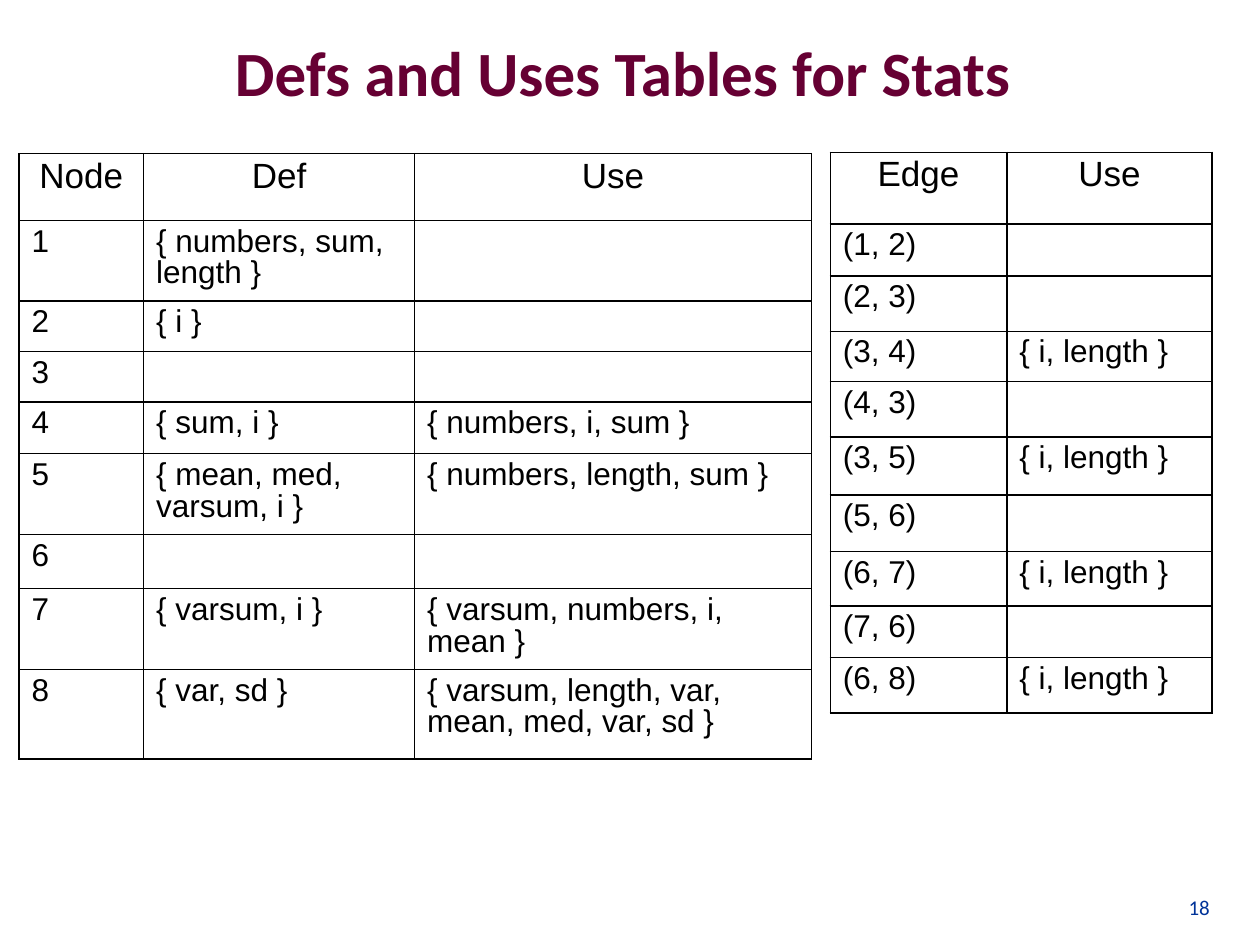
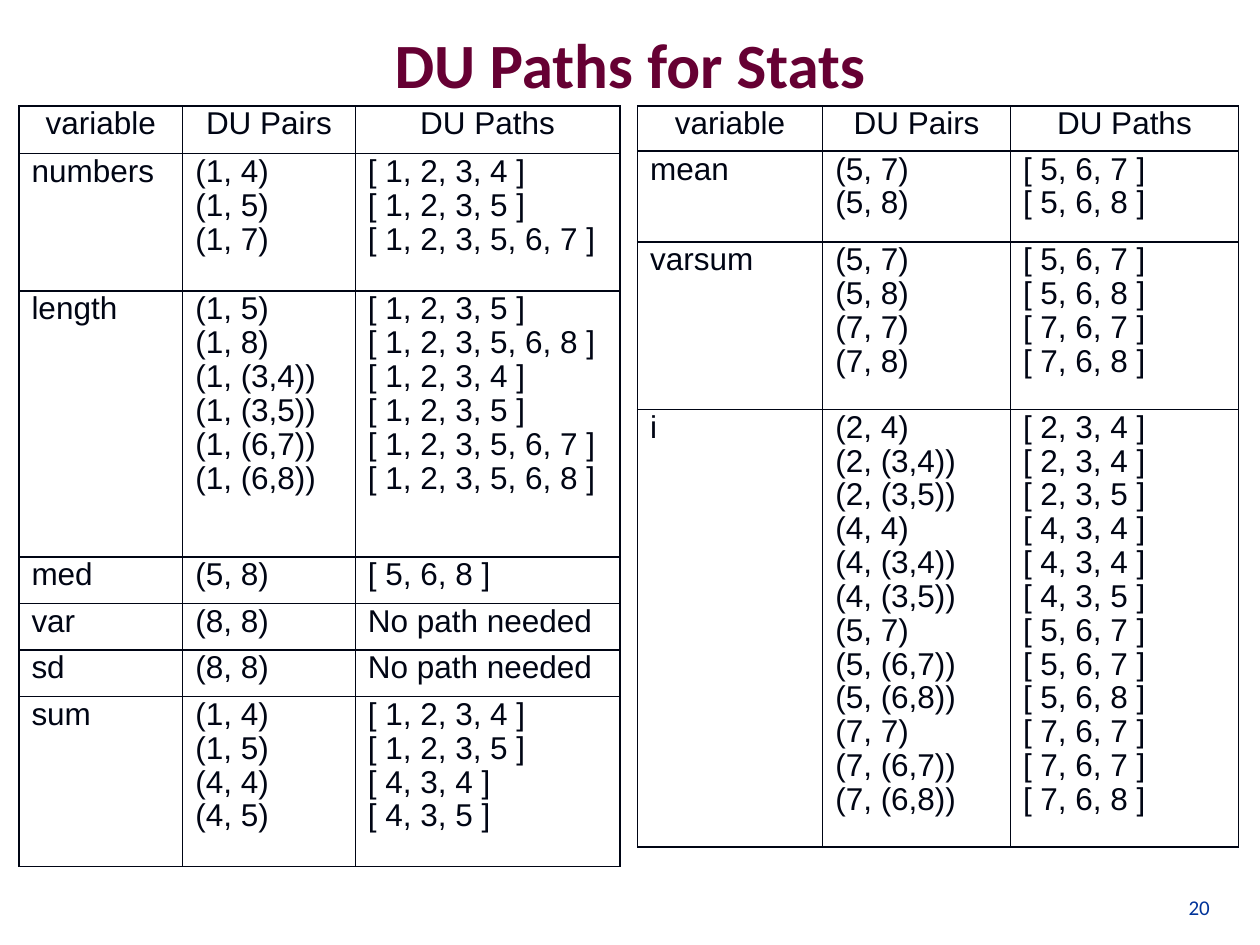
from lxml import etree
from pptx import Presentation
from pptx.dml.color import RGBColor
from pptx.enum.text import MSO_ANCHOR, MSO_AUTO_SIZE, PP_ALIGN
from pptx.oxml.ns import qn
from pptx.util import Inches, Pt

LEFT, CENTER, RIGHT = PP_ALIGN.LEFT, PP_ALIGN.CENTER, PP_ALIGN.RIGHT
MIDDLE, BOTTOM = MSO_ANCHOR.MIDDLE, MSO_ANCHOR.BOTTOM
NO_FIT = MSO_AUTO_SIZE.NONE

MAROON = RGBColor(0x66, 0x00, 0x33)
BLUE = RGBColor(0x00, 0x33, 0x99)
BLACK = RGBColor(0x00, 0x00, 0x00)
INK = RGBColor(0x00, 0x05, 0x14)
WHITE = RGBColor(0xFF, 0xFF, 0xFF)

HEADING_FONT = "Calibri"
TABLE_FONT = "Arial"
TITLE_ONLY = 5
SIDES = ("a:lnL", "a:lnR", "a:lnT", "a:lnB")

NODES = [
    ("Node", "Def", "Use"),
    ("1", "{ numbers, sum, length }", ""),
    ("2", "{ i }", ""),
    ("3", "", ""),
    ("4", "{ sum, i }", "{ numbers, i, sum }"),
    ("5", "{ mean, med, varsum, i }", "{ numbers, length, sum }"),
    ("6", "", ""),
    ("7", "{ varsum, i }", "{ varsum, numbers, i, mean }"),
    ("8", "{ var, sd }", "{ varsum, length, var, mean, med, var, sd }"),
]

PREDICATE_USE = "{ i, length }"
EDGES = [
    ("Edge", "Use"),
    ("(1, 2)", ""),
    ("(2, 3)", ""),
    ("(3, 4)", PREDICATE_USE),
    ("(4, 3)", ""),
    ("(3, 5)", PREDICATE_USE),
    ("(5, 6)", ""),
    ("(6, 7)", PREDICATE_USE),
    ("(7, 6)", ""),
    ("(6, 8)", PREDICATE_USE),
]

PATH_HEADER = ("variable", "DU Pairs", "DU Paths")
NO_PATH = "No path needed"
FIRST_VARIABLES = {
    "numbers": [
        ("(1, 4)", "[ 1, 2, 3, 4 ]"),
        ("(1, 5)", "[ 1, 2, 3, 5 ]"),
        ("(1, 7)", "[ 1, 2, 3, 5, 6, 7 ]"),
    ],
    "length": [
        ("(1, 5)", "[ 1, 2, 3, 5 ]"),
        ("(1, 8)", "[ 1, 2, 3, 5, 6, 8 ]"),
        ("(1, (3,4))", "[ 1, 2, 3, 4 ]"),
        ("(1, (3,5))", "[ 1, 2, 3, 5 ]"),
        ("(1, (6,7))", "[ 1, 2, 3, 5, 6, 7 ]"),
        ("(1, (6,8))", "[ 1, 2, 3, 5, 6, 8 ]"),
    ],
    "med": [("(5, 8)", "[ 5, 6, 8 ]")],
    "var": [("(8, 8)", NO_PATH)],
    "sd": [("(8, 8)", NO_PATH)],
    "sum": [
        ("(1, 4)", "[ 1, 2, 3, 4 ]"),
        ("(1, 5)", "[ 1, 2, 3, 5 ]"),
        ("(4, 4)", "[ 4, 3, 4 ]"),
        ("(4, 5)", "[ 4, 3, 5 ]"),
    ],
}
SECOND_VARIABLES = {
    "mean": [("(5, 7)", "[ 5, 6, 7 ]"), ("(5, 8)", "[ 5, 6, 8 ]")],
    "varsum": [
        ("(5, 7)", "[ 5, 6, 7 ]"),
        ("(5, 8)", "[ 5, 6, 8 ]"),
        ("(7, 7)", "[ 7, 6, 7 ]"),
        ("(7, 8)", "[ 7, 6, 8 ]"),
    ],
    "i": [
        ("(2, 4)", "[ 2, 3, 4 ]"),
        ("(2, (3,4))", "[ 2, 3, 4 ]"),
        ("(2, (3,5))", "[ 2, 3, 5 ]"),
        ("(4, 4)", "[ 4, 3, 4 ]"),
        ("(4, (3,4))", "[ 4, 3, 4 ]"),
        ("(4, (3,5))", "[ 4, 3, 5 ]"),
        ("(5, 7)", "[ 5, 6, 7 ]"),
        ("(5, (6,7))", "[ 5, 6, 7 ]"),
        ("(5, (6,8))", "[ 5, 6, 8 ]"),
        ("(7, 7)", "[ 7, 6, 7 ]"),
        ("(7, (6,7))", "[ 7, 6, 7 ]"),
        ("(7, (6,8))", "[ 7, 6, 8 ]"),
    ],
}


def write(frame, text, font=TABLE_FONT, size=18, color=BLACK, bold=False,
          align=LEFT, line_spacing=1.0, space_before=0):
    for index, line in enumerate(text.split("\n")):
        paragraph = frame.add_paragraph() if index else frame.paragraphs[0]
        paragraph.alignment = align
        paragraph.line_spacing = line_spacing
        paragraph.space_before = Pt(space_before if index else 0)
        run = paragraph.add_run()
        run.text = line
        run.font.name = font
        run.font.size = Pt(size)
        run.font.bold = bold
        run.font.color.rgb = color


def path_rows(variables):
    rows = [PATH_HEADER]
    for variable, entries in variables.items():
        pairs, paths = zip(*entries)
        rows.append((variable, "\n".join(pairs), "\n".join(paths)))
    return rows


def outline(cell, color):
    properties = cell._tc.get_or_add_tcPr()
    for side in SIDES:
        line = etree.SubElement(properties, qn(side), w=str(Pt(1)))
        fill = etree.SubElement(line, qn("a:solidFill"))
        etree.SubElement(fill, qn("a:srgbClr"), val=str(color))


class Deck:
    def __init__(self):
        self.presentation = Presentation()
        self.presentation.slide_width = Inches(10)
        self.presentation.slide_height = Inches(7.5)
        self.slide = None

    def new_slide(self, title, title_box, number):
        layout = self.presentation.slide_layouts[TITLE_ONLY]
        self.slide = self.presentation.slides.add_slide(layout)
        self.title(title, title_box)
        self.page_number(number)

    def title(self, text, box):
        heading = self.slide.shapes.title
        heading.left, heading.top, heading.width, heading.height = map(Inches, box)
        frame = heading.text_frame
        frame.word_wrap = True
        frame.auto_size = NO_FIT
        frame.vertical_anchor = MIDDLE
        write(frame, text, font=HEADING_FONT, size=36, color=MAROON,
              bold=True, align=CENTER)

    def page_number(self, number):
        corner = self.slide.shapes.add_textbox(
            Inches(9.01), Inches(6.83), Inches(0.69), Inches(0.52))
        frame = corner.text_frame
        frame.word_wrap = True
        frame.vertical_anchor = BOTTOM
        write(frame, str(number), font=HEADING_FONT, size=12, color=BLUE, align=RIGHT)

    def table(self, rows, left, top, widths, heights, header_size=18, **style):
        table = self.slide.shapes.add_table(
            len(rows), len(widths), Inches(left), Inches(top),
            Inches(sum(widths)), Inches(sum(heights))).table
        table.first_row = False
        table.horz_banding = False
        for column, width in zip(table.columns, widths):
            column.width = Inches(width)
        for index, (row, height, texts) in enumerate(zip(table.rows, heights, rows)):
            row.height = Inches(height)
            for cell, text in zip(row.cells, texts):
                outline(cell, style["color"])
                cell.fill.solid()
                cell.fill.fore_color.rgb = WHITE
                if text:
                    write(cell.text_frame, text,
                          size=18 if index else header_size,
                          align=LEFT if index else CENTER, **style)


def main():
    deck = Deck()

    deck.new_slide("Defs and Uses Tables for Stats ", (0.5, -0.06, 9, 1.25), 18)
    uses_style = dict(header_size=20, color=BLACK, line_spacing=0.9)
    deck.table(NODES, 0.15, 1.22, (0.99, 2.15, 3.15),
               (0.53, 0.6, 0.4, 0.35, 0.41, 0.6, 0.43, 0.6, 0.71), **uses_style)
    deck.table(EDGES, 6.59, 1.21, (1.4, 1.63),
               (0.57, 0.41, 0.44, 0.4, 0.44, 0.46, 0.45, 0.43, 0.41, 0.44),
               **uses_style)

    deck.new_slide("DU Paths for Stats", (0.75, 0.11, 8.5, 0.79), 20)
    paths_style = dict(color=INK, line_spacing=0.8, space_before=3.2)
    deck.table(path_rows(FIRST_VARIABLES), 0.15, 0.84, (1.3, 1.37, 2.1),
               (0.38, 1.09, 2.11, 0.37, 0.37, 0.37, 1.35), **paths_style)
    deck.table(path_rows(SECOND_VARIABLES), 5.06, 0.84, (1.47, 1.49, 1.81),
               (0.36, 0.72, 1.33, 3.34), **paths_style)

    deck.presentation.save("out.pptx")


if __name__ == "__main__":
    main()
